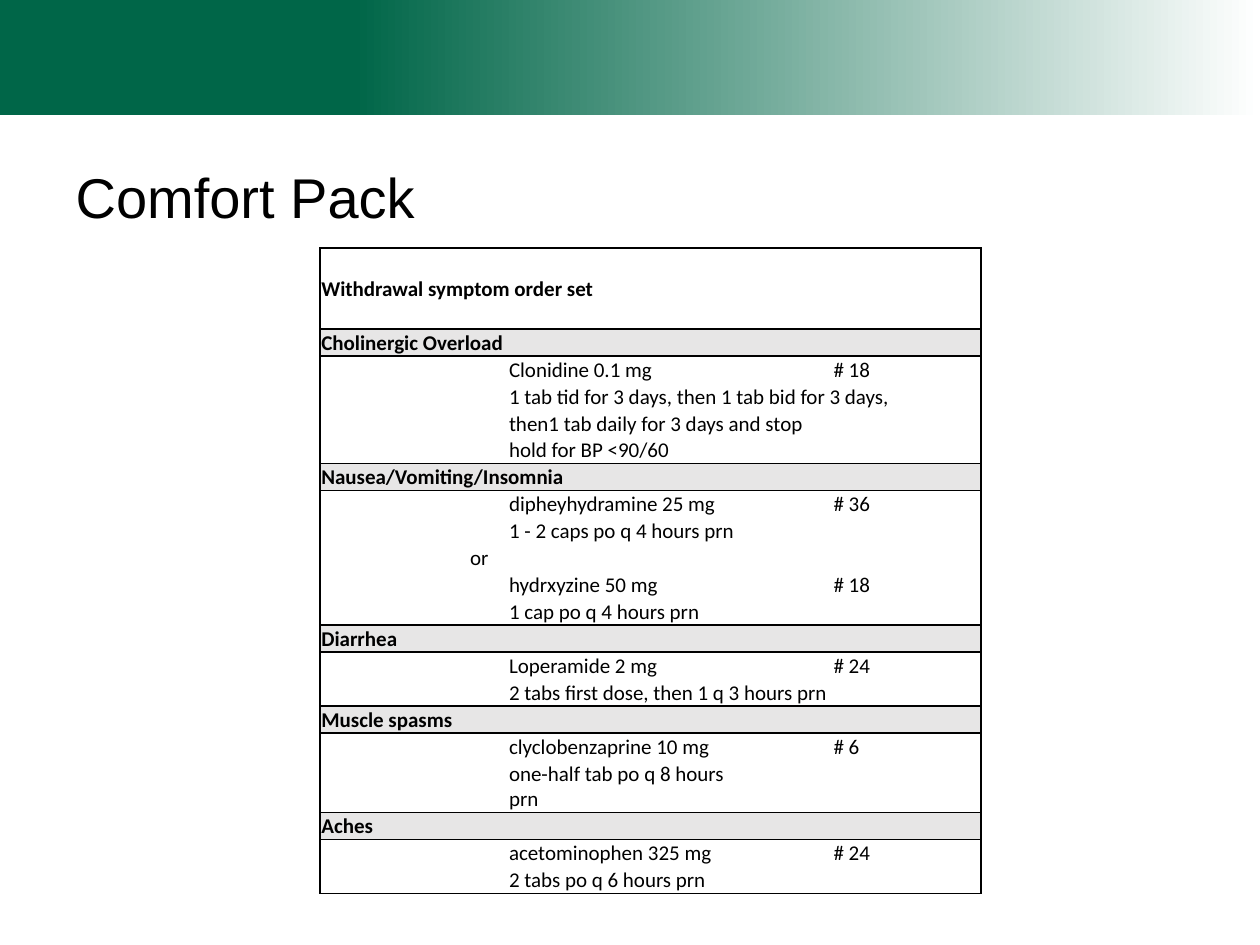
from dataclasses import dataclass

from lxml.etree import SubElement
from pptx import Presentation
from pptx.dml.color import RGBColor as Rgb
from pptx.enum.shapes import MSO_SHAPE as Shape
from pptx.enum.text import MSO_ANCHOR as Anchor, PP_ALIGN as Align
from pptx.oxml.ns import qn
from pptx.util import Pt


@dataclass(frozen=True)
class Theme:
    green: str = "006648"
    white: str = "FFFFFF"
    black: str = "000000"
    gray: str = "E7E6E6"
    head: str = "Arial"
    body: str = "Calibri"
    title: int = 32
    text: int = 12


THEME = Theme()
PLAIN = "{2D5ABB26-0587-4C30-8999-92F81FD0307C}"
COLS = [41.8, 18.7, 24.5, 22.3, 143, 42.5, 42.5, 42.5]
ROW, TALL, INSET = 15.3, 29.9, 0.75
OR, DRUG, COUNT = 3, 4, 6

# Heading, columns it spans, first column of the merged pair below it,
# then the rows: {column: (text, columns spanned)}
GROUPS = [
    ("Cholinergic Overload", 4, 1, [
        {DRUG: ("Clonidine 0.1 mg", 1), COUNT: ("# 18", 1)},
        {DRUG: ("1 tab tid for 3 days, then 1 tab bid for 3 days,", 3)},
        {DRUG: ("then1 tab daily for 3 days and stop", 2)},
        {DRUG: ("hold for BP <90/60", 1)}]),
    ("Nausea/Vomiting/Insomnia", 5, 0, [
        {DRUG: ("dipheyhydramine 25 mg", 1), COUNT: ("# 36", 1)},
        {DRUG: ("1 - 2 caps po q 4 hours prn", 1)},
        {OR: ("or", 1)},
        {DRUG: ("hydrxyzine 50 mg", 1), COUNT: ("# 18", 1)},
        {DRUG: ("1 cap po q 4 hours prn", 1)}]),
    ("Diarrhea", 2, 0, [
        {DRUG: ("Loperamide 2 mg", 1), COUNT: ("# 24", 1)},
        {DRUG: ("2 tabs first dose, then 1 q 3 hours prn", 2)}]),
    ("Muscle spasms", 3, 1, [
        {DRUG: ("clyclobenzaprine 10 mg", 1), COUNT: ("# 6", 1)},
        {DRUG: ("one-half tab po q 8 hours prn", 1)}]),
    ("Aches", 1, 1, [
        {DRUG: ("acetominophen 325 mg", 1), COUNT: ("# 24", 1)},
        {DRUG: ("2 tabs po q 6 hours prn", 1)}]),
]
WRAPPED = "one-half tab po q 8 hours prn"


@dataclass
class Line:
    """One table row: its texts by column, merged pair and look."""
    texts: dict
    pair: int | None = None
    bold: bool = False
    fill: bool = False
    top: bool = False
    end: bool = False


def list_lines():
    lines = [Line({}, 1, top=True),
             Line({0: ("Withdrawal symptom order set", 5)}, bold=True),
             Line({}, 1, end=True)]
    for name, span, pair, rows in GROUPS:
        lines.append(Line({0: (name, span)}, 1 if span == 1 else None,
                          bold=True, fill=True, top=True))
        lines += [Line(row, pair, end=row is rows[-1]) for row in rows]
    return lines


def style(font, face, size, bold=False):
    font.name, font.size, font.bold = face, Pt(size), bold
    font.color.rgb = Rgb.from_string(THEME.black)


def add_edges(cell, sides):
    props = cell._tc.get_or_add_tcPr()
    for side in "LRTB":
        if side in sides:
            edge = SubElement(props, qn(f"a:ln{side}"), w=str(Pt(1)))
            fill = SubElement(edge, qn("a:solidFill"))
            SubElement(fill, qn("a:srgbClr"), val=THEME.black)


def fill_cell(cell, text, line, sides):
    cell.margin_left = cell.margin_right = cell.margin_top = Pt(INSET)
    cell.margin_bottom = 0
    cell.vertical_anchor = Anchor.BOTTOM
    add_edges(cell, sides)
    if line.fill:
        cell.fill.solid()
        cell.fill.fore_color.rgb = Rgb.from_string(THEME.gray)
    else:
        cell.fill.background()
    para = cell.text_frame.paragraphs[0]
    if text:
        para.text = text
        style(para.runs[0].font, THEME.body, THEME.text, line.bold)
    else:
        # The end mark sets the height of an empty cell
        mark = SubElement(para._p, qn("a:endParaRPr"), sz=str(THEME.text * 100))
        SubElement(mark, qn("a:latin"), typeface=THEME.body)


def add_orders(slide, left, top):
    lines = list_lines()
    table = slide.shapes.add_table(len(lines), len(COLS), Pt(left), Pt(top),
                                   Pt(sum(COLS)), Pt(ROW * len(lines))).table
    table.first_row = table.horz_banding = False
    table._tbl.tblPr.find(qn("a:tableStyleId")).text = PLAIN
    for col, width in zip(table.columns, COLS):
        col.width = Pt(width)
    last = len(COLS) - 1
    for r, line in enumerate(lines):
        wraps = line.texts.get(DRUG, ("",))[0] == WRAPPED
        table.rows[r].height = Pt(TALL if wraps else ROW)
        for c in range(len(COLS)):
            sides = ("L" * (c == 0) + "R" * (c == last)
                     + "T" * line.top + "B" * line.end)
            text = line.texts.get(c, ("",))[0]
            fill_cell(table.cell(r, c), text, line, sides)
        spans = {c: span for c, (_, span) in line.texts.items()}
        if line.pair is not None:
            spans[line.pair] = 2
        for c, span in spans.items():
            if span > 1:
                table.cell(r, c).merge(table.cell(r, c + span - 1))


def add_band(slide, left, top, width, height):
    band = slide.shapes.add_shape(Shape.RECTANGLE, Pt(left), Pt(top),
                                  Pt(width), Pt(height))
    band.shadow.inherit = False
    band.line.fill.background()
    band.fill.gradient()
    band.fill.gradient_angle = 0
    stops = [(0.28, THEME.green), (1, THEME.white)]
    for stop, (place, color) in zip(band.fill.gradient_stops, stops):
        stop.position = place
        stop.color.rgb = Rgb.from_string(color)


def set_title(slide, text, left, top, width, height):
    title = slide.shapes.title
    title.left, title.top = Pt(left), Pt(top)
    title.width, title.height = Pt(width), Pt(height)
    frame = title.text_frame
    frame.text = text
    frame.vertical_anchor = Anchor.MIDDLE
    para = frame.paragraphs[0]
    para.alignment = Align.LEFT
    style(para.runs[0].font, THEME.head, THEME.title)


def main():
    deck = Presentation()
    deck.slide_width, deck.slide_height = Pt(720), Pt(540)
    slide = deck.slides.add_slide(deck.slide_layouts[5])
    add_band(slide, 0, 0, 720, 66)
    set_title(slide, "Comfort Pack", 36, 67, 648, 90)
    add_orders(slide, 182.9, 141.8)
    deck.save("out.pptx")


if __name__ == "__main__":
    main()
